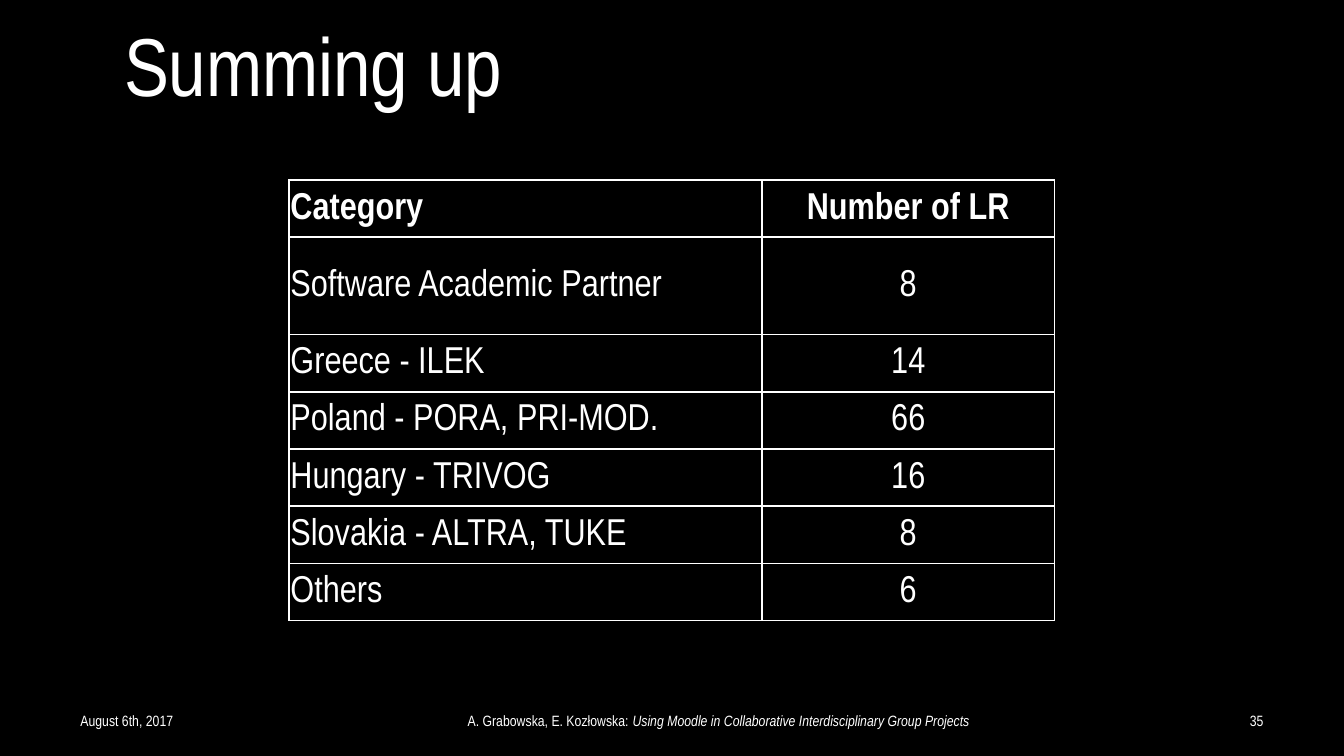
"""Build the "Summing up" slide with a table of learning resources by category."""
from lxml.etree import SubElement
from pptx import Presentation
from pptx.dml.color import RGBColor
from pptx.enum.text import MSO_ANCHOR as Anchor, PP_ALIGN as Align
from pptx.oxml.ns import qn
from pptx.util import Cm, Pt

BLACK = RGBColor(0x00, 0x00, 0x00)
WHITE = RGBColor(0xFF, 0xFF, 0xFF)
FONT = "Arial Narrow"


def format_font(font, **values):
    for name, value in {"name": FONT, **values}.items():
        setattr(font, name, value)
    font.color.rgb = WHITE


def add_border(cell):
    properties = cell._tc.get_or_add_tcPr()
    for side in ("lnL", "lnR", "lnT", "lnB"):
        line = SubElement(properties, qn(f"a:{side}"), w=str(Pt(1)))
        fill = SubElement(line, qn("a:solidFill"))
        SubElement(fill, qn("a:srgbClr"), val=str(WHITE))


deck = Presentation()
deck.slide_width, deck.slide_height = Cm(25.4), Cm(14.28)
page = deck.slides.add_slide(deck.slide_layouts[5])
page.background.fill.solid()
page.background.fill.fore_color.rgb = BLACK

title = page.shapes.title
title_place = {"left": Cm(0), "top": Cm(0), "width": Cm(11.84), "height": Cm(2.39)}
for name, value in title_place.items():
    setattr(title, name, value)
title.text_frame.text = "Summing up"
title.text_frame.vertical_anchor = Anchor.MIDDLE
title_para = title.text_frame.paragraphs[0]
title_para.alignment = Align.CENTER
format_font(title_para.runs[0].font, size=Pt(44))

rows = [
    ("Category", "Number of LR"),
    ("Software Academic Partner", "8"),
    ("Greece - ILEK", "14"),
    ("Poland - PORA, PRI-MOD.", "66"),
    ("Hungary - TRIVOG", "16"),
    ("Slovakia - ALTRA, TUKE", "8"),
    ("Others", "6"),
]
row_heights = [1.08, 1.84] + [1.08] * 5
column_widths = [8.94, 5.53]
table = page.shapes.add_table(
    len(rows), 2, Cm(5.46), Cm(3.4), Cm(sum(column_widths)), Cm(sum(row_heights))
).table
table.first_row = table.horz_banding = False
for column, width in zip(table.columns, column_widths):
    column.width = Cm(width)

cell_format = {
    "margin_left": Cm(0.03),
    "margin_right": Cm(0.03),
    "margin_top": Cm(0.03),
    "margin_bottom": Cm(0),
    "vertical_anchor": Anchor.MIDDLE,
}
for row_index, (texts, height) in enumerate(zip(rows, row_heights)):
    table.rows[row_index].height = Cm(height)
    for column_index, (text, align) in enumerate(zip(texts, (Align.LEFT, Align.CENTER))):
        cell = table.cell(row_index, column_index)
        for name, value in cell_format.items():
            setattr(cell, name, value)
        add_border(cell)
        cell.fill.solid()
        cell.fill.fore_color.rgb = BLACK
        cell.text = text
        para = cell.text_frame.paragraphs[0]
        para.alignment = align
        format_font(para.runs[0].font, size=Pt(20), bold=row_index == 0)

footers = [
    (1.27, 5.92, Align.LEFT, [("August 6th, 2017", False)]),
    (4.09, 19, Align.CENTER, [
        ("A. Grabowska, E. Kozłowska: ", False),
        ("Using Moodle in Collaborative Interdisciplinary Group Projects", True),
    ]),
    (18.21, 5.92, Align.RIGHT, [("35", False)]),
]
for left, width, align, spans in footers:
    box = page.shapes.add_textbox(Cm(left), Cm(13.23), Cm(width), Cm(0.76))
    box.text_frame.word_wrap = True
    box.text_frame.vertical_anchor = Anchor.MIDDLE
    para = box.text_frame.paragraphs[0]
    para.alignment = align
    for text, italic in spans:
        span = para.add_run()
        span.text = text
        format_font(span.font, size=Pt(8), italic=italic)

deck.save("out.pptx")
